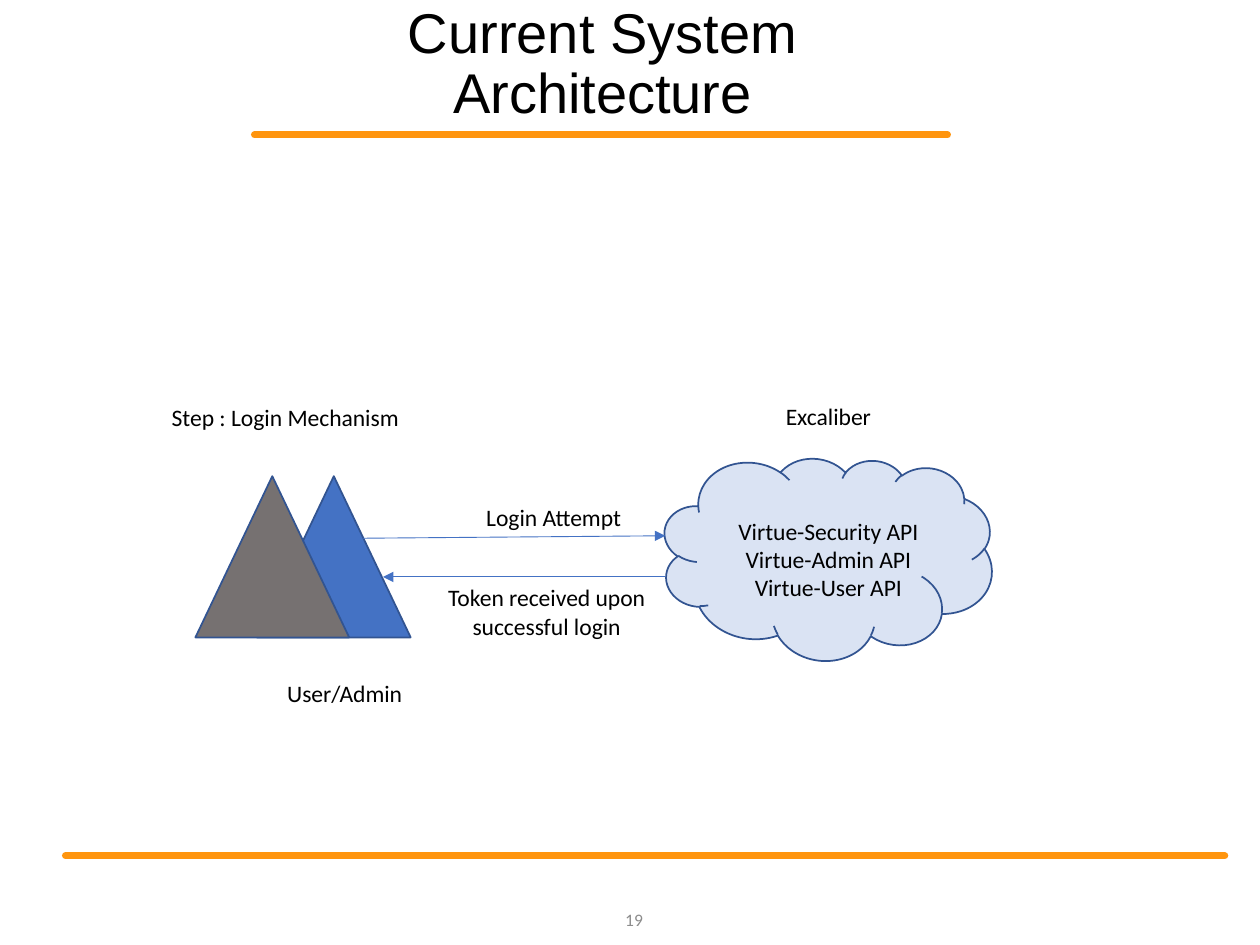
import pptx
import pptx.util
from lxml import etree
from pptx.dml.color import RGBColor
from pptx.enum.shapes import MSO_CONNECTOR, MSO_SHAPE
from pptx.enum.text import MSO_ANCHOR, MSO_AUTO_SIZE, PP_ALIGN
from pptx.oxml.ns import qn

Cm, Pt = pptx.util.Cm, pptx.util.Pt

TITLE = "Current System Architecture"
PAGE = "19"
ORANGE, BLUE, OUTLINE = "FF950E", "4472C4", "325491"

# start x, start y, end x, end y (cm)
RULES = [(5.13, 2.72, 19.1, 2.72), (1.32, 17.25, 24.69, 17.25)]
ARROWS = [(7.32, 10.85, 13.41, 10.8), (13.41, 11.63, 7.72, 11.63)]

# preset, left, top, width, height (cm), rotation, fill
USER = (MSO_SHAPE.ISOSCELES_TRIANGLE, 5.18, 9.6, 3.1, 3.25, 0, BLUE)
ADMIN = (MSO_SHAPE.ISOSCELES_TRIANGLE, 3.94, 9.6, 3.1, 3.25, 0, "767171")
CLOUD = (MSO_SHAPE.CLOUD, 13.36, 9.17, 6.65, 4.14, 7.6, "DAE3F3")

# lines of text, centre x, top, width (cm)
LABELS = [
    (["Step : Login Mechanism"], 5.75, 8.0, 5.16),
    (["Excaliber"], 16.7, 7.98, 2.26),
    (["Virtue-Security API", "Virtue-Admin API", "Virtue-User API"], 16.7, 10.29, 4.19),
    (["Login Attempt"], 11.16, 10.01, 3.28),
    (["Token received upon", "successful login"], 11.02, 11.63, 4.5),
    (["User/Admin"], 6.95, 13.56, 2.87),
]
LABEL_FONT = {"name": "Calibri", "size": Pt(13.5)}


def rgb(code):
    return RGBColor.from_string(code)


def write(tf, lines, font, color, align):
    tf.text = "\n".join(lines)
    for p in tf.paragraphs:
        p.alignment = align
        for r in p.runs:
            for key, value in font.items():
                setattr(r.font, key, value)
            r.font.color.rgb = rgb(color)


def add_line(s, points, color, width, cap=None, arrow=False):
    line = s.shapes.add_connector(MSO_CONNECTOR.STRAIGHT, *map(Cm, points))
    line.line.color.rgb = rgb(color)
    line.line.width = Pt(width)
    ln = line.line._get_or_add_ln()
    if cap:
        ln.set("cap", cap)
    if arrow:
        etree.SubElement(ln, qn("a:tailEnd"), type="triangle")
    etree.SubElement(line._element.spPr, qn("a:effectLst"))


def add_figure(s, preset, left, top, width, height, rotation, fill):
    sp = s.shapes.add_shape(preset, Cm(left), Cm(top), Cm(width), Cm(height))
    sp.rotation = rotation
    sp.shadow.inherit = False
    sp.fill.solid()
    sp.fill.fore_color.rgb = rgb(fill)
    sp.line.color.rgb = rgb(OUTLINE)
    sp.line.width = Pt(1)


def add_label(s, lines, center, top, width):
    height = 0.25 + 0.58 * len(lines)
    tf = s.shapes.add_textbox(Cm(center - width / 2), Cm(top), Cm(width), Cm(height)).text_frame
    tf.word_wrap = False
    tf.auto_size = MSO_AUTO_SIZE.SHAPE_TO_FIT_TEXT
    write(tf, lines, LABEL_FONT, "000000", PP_ALIGN.CENTER)


def add_title(s):
    title = s.shapes.title
    box = {"left": 5.18, "top": 1.12, "width": 13.94, "height": 1.55}
    for key, value in box.items():
        setattr(title, key, Cm(value))
    tf = title.text_frame
    tf.word_wrap = True
    tf.auto_size = MSO_AUTO_SIZE.NONE
    tf.vertical_anchor = MSO_ANCHOR.BOTTOM
    write(tf, [TITLE], {"name": "Arial", "size": Pt(32)}, "000000", PP_ALIGN.CENTER)
    tf.paragraphs[0].line_spacing = 0.9


def add_page_number(s):
    tf = s.shapes.add_textbox(Cm(12.19), Cm(18.03), Cm(1.02), Cm(1.02)).text_frame
    tf.word_wrap = True
    tf.vertical_anchor = MSO_ANCHOR.MIDDLE
    write(tf, [PAGE], {"name": "Calibri", "size": Pt(10)}, "8C8C8C", PP_ALIGN.RIGHT)
    tf.paragraphs[0].space_after = Pt(6)


def main():
    prs = pptx.Presentation()
    prs.slide_width, prs.slide_height = Cm(25.4), Cm(19.05)
    s = prs.slides.add_slide(prs.slide_layouts[5])
    add_title(s)
    for points in RULES:
        add_line(s, points, ORANGE, 4, cap="rnd")
    add_figure(s, *USER)
    add_figure(s, *CLOUD)
    for points in ARROWS:
        add_line(s, points, BLUE, 0.5, arrow=True)
    add_figure(s, *ADMIN)
    for label in LABELS:
        add_label(s, *label)
    add_page_number(s)
    prs.save("out.pptx")


if __name__ == "__main__":
    main()
